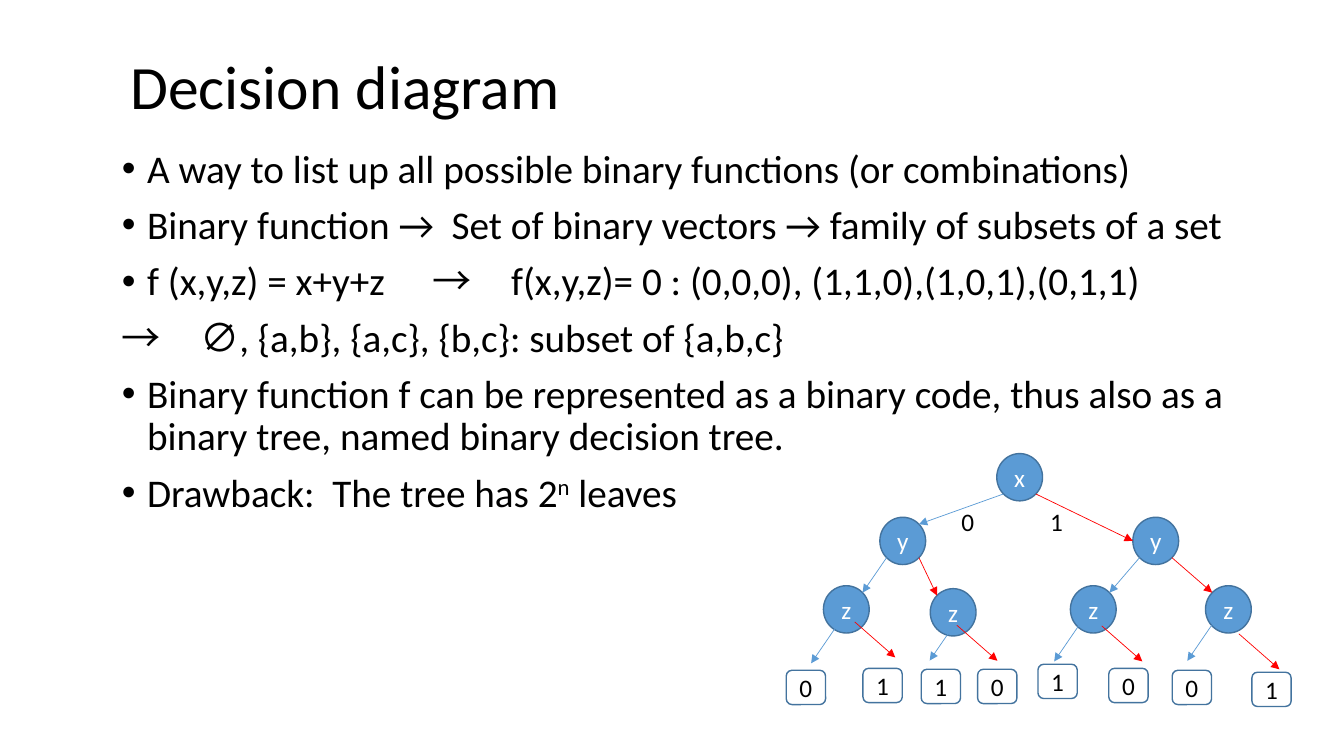
"""Build the decision diagram slide."""
import math
import pptx
import pptx.util
import pptx.dml.color
import pptx.enum.shapes
import pptx.enum.text
import pptx.oxml
import pptx.oxml.ns
from lxml import etree

Pt = pptx.util.Pt
MSO = pptx.enum.shapes.MSO_SHAPE
ALIGN = pptx.enum.text.PP_ALIGN
ANCHOR = pptx.enum.text.MSO_ANCHOR

TITLE = "Decision diagram"
BODY = [
    (True, ["A way to list up all possible binary functions (or combinations)"]),
    (True, ["Binary function →  Set of binary vectors → family of subsets of a set"]),
    (True, ["f (x,y,z) = x+y+z 　→　f(x,y,z)= 0 : (0,0,0), (1,1,0),(1,0,1),(0,1,1)"]),
    (False, ["→　∅, {a,b}, {a,c}, {b,c}: subset of {a,b,c}"]),
    (True, ["Binary function f can be represented as a binary code, "
            "thus also as a binary tree, named binary decision tree."]),
    (True, ["Drawback:  The tree has 2", "n", " leaves"]),
]
NODES = {
    "root": ("x", 712, 324),
    "y0": ("y", 628.5, 369.5), "y1": ("y", 809.2, 369.5),
    "z00": ("z", 588.2, 418.4), "z01": ("z", 664.5, 420.5),
    "z10": ("z", 764.6, 418.4), "z11": ("z", 861.1, 418.4),
}
EDGES = [
    ("root", "y0", "zero", "top right"), ("root", "y1", "one", "left"),
    ("y0", "z00", "zero", "top right"), ("y0", "z01", "one", "top left"),
    ("y1", "z10", "zero", "top right"), ("y1", "z11", "one", "top left"),
]
LEAVES = [
    ("0", 561.6, 478.8), ("1", 616.4, 477.4), ("1", 658, 478.1), ("0", 698.3, 478.1),
    ("1", 741.4, 474.5), ("0", 792, 477.4), ("0", 837.3, 478.8), ("1", 894.2, 480.2),
]
LEAF_ARROWS = {
    "zero": [(596.8, 448.4), (681.5, 446.4), (770.4, 447.1), (865.5, 446.6)],
    "one": [(610.5, 444.2), (683.5, 446.6), (787, 447.1), (884.9, 452.7)],
}
LEAF_STEP = {"zero": (-17.4, 25.4), "one": (29, 25.4)}
BRANCH_LABELS = [("0", 681.1), ("1", 744.5)]
COLORS = {"text": "000000", "node": "5B9BD5", "outline": "43739E",
          "label": "FFFFFF", "zero": "5B9BD5", "one": "FF0000"}
NODE_SIZE = (32.7, 33.8)
LEAF_SIZE = (28.1, 24.5)
ANGLES = {"left": 180, "top left": 225, "top right": 315,
          "bottom right": 45, "bottom left": 135}


def rgb(name):
    """Return the named colour."""
    return pptx.dml.color.RGBColor.from_string(COLORS[name])


def write(p, text, size=18, color="text", align=ALIGN.LEFT, raised=False):
    """Add a formatted run to a paragraph."""
    p.alignment = align
    r = p.add_run()
    r.text = text
    r.font.name = "Calibri"
    r.font.size = Pt(size)
    r.font.color.rgb = rgb(color)
    if raised:
        r.font._element.set("baseline", "30000")


def center(sp, text, color="text"):
    """Centre one line of text in a shape."""
    tf = sp.text_frame
    tf.margin_left = tf.margin_right = tf.margin_top = tf.margin_bottom = 0
    tf.vertical_anchor = ANCHOR.MIDDLE
    tf.word_wrap = False
    write(tf.paragraphs[0], text, color=color, align=ALIGN.CENTER)


def add_box(s, kind, text, left, top, size, fill=None, color="text"):
    """Add an outlined tree node or leaf."""
    sp = s.shapes.add_shape(kind, Pt(left), Pt(top), Pt(size[0]), Pt(size[1]))
    sp.shadow.inherit = False
    if fill:
        sp.fill.solid()
        sp.fill.fore_color.rgb = rgb(fill)
    else:
        sp.fill.background()
    sp.line.color.rgb = rgb("outline")
    sp.line.width = Pt(1)
    center(sp, text, color)


def add_arrow(s, start, end, color):
    """Add a thin arrow between two points."""
    line = s.shapes.add_connector(pptx.enum.shapes.MSO_CONNECTOR.STRAIGHT,
                                  *(Pt(v) for v in (*start, *end)))
    line.line.color.rgb = rgb(color)
    line.line.width = Pt(0.5)
    ln = line.line._get_or_add_ln()
    etree.SubElement(ln, pptx.oxml.ns.qn("a:tailEnd"), type="triangle")
    etree.SubElement(line._element.spPr, pptx.oxml.ns.qn("a:effectLst"))


def rim(name, side):
    """Return the point on a node's rim at the named side."""
    left, top = NODES[name][1:]
    w, h = NODE_SIZE
    angle = math.radians(ANGLES[side])
    return left + w / 2 * (1 + math.cos(angle)), top + h / 2 * (1 + math.sin(angle))


def add_title(s):
    """Place and fill the title."""
    sp = s.shapes.title
    sp.left, sp.top, sp.width, sp.height = Pt(66), Pt(11.5), Pt(828), Pt(104.4)
    tf = sp.text_frame
    tf.margin_left = Pt(27)
    tf.vertical_anchor = ANCHOR.MIDDLE
    p = tf.paragraphs[0]
    p.line_spacing = 0.9
    write(p, TITLE, size=44)


def add_body(s):
    """Add the bulleted text."""
    tf = s.shapes.add_textbox(Pt(80), Pt(103), Pt(828), Pt(342.7)).text_frame
    tf.word_wrap = True
    for i, (bulleted, runs) in enumerate(BODY):
        p = tf.add_paragraph() if i else tf.paragraphs[0]
        p.line_spacing = 0.9
        p.space_before = Pt(10)
        for j, text in enumerate(runs):
            write(p, text, size=28, raised=j == 1)
        if bulleted:
            pPr = p._p.get_or_add_pPr()
            pPr.set("marL", str(Pt(18)))
            pPr.set("indent", str(-Pt(18)))
            etree.SubElement(pPr, pptx.oxml.ns.qn("a:buFont"), typeface="Arial")
            etree.SubElement(pPr, pptx.oxml.ns.qn("a:buChar"), char="•")


def add_tree(s):
    """Draw the binary decision tree."""
    for text, left, top in NODES.values():
        add_box(s, MSO.OVAL, text, left, top, NODE_SIZE, "node", "label")
    for parent, child, branch, side in EDGES:
        out = "bottom left" if branch == "zero" else "bottom right"
        add_arrow(s, rim(parent, out), rim(child, side), branch)
    for branch, starts in LEAF_ARROWS.items():
        dx, dy = LEAF_STEP[branch]
        for x, y in starts:
            add_arrow(s, (x, y), (x + dx, y + dy), branch)
    for text, left, top in LEAVES:
        add_box(s, MSO.ROUNDED_RECTANGLE, text, left, top, LEAF_SIZE)
    for text, left in BRANCH_LABELS:
        center(s.shapes.add_textbox(Pt(left), Pt(357.8), Pt(20.2), Pt(29)), text)


def main():
    """Create and save the slide."""
    prs = pptx.Presentation()
    prs.slide_width, prs.slide_height = Pt(960), Pt(540)
    s = prs.slides.add_slide(prs.slide_layouts[5])
    add_title(s)
    add_body(s)
    add_tree(s)
    prs.save("out.pptx")


if __name__ == "__main__":
    main()
